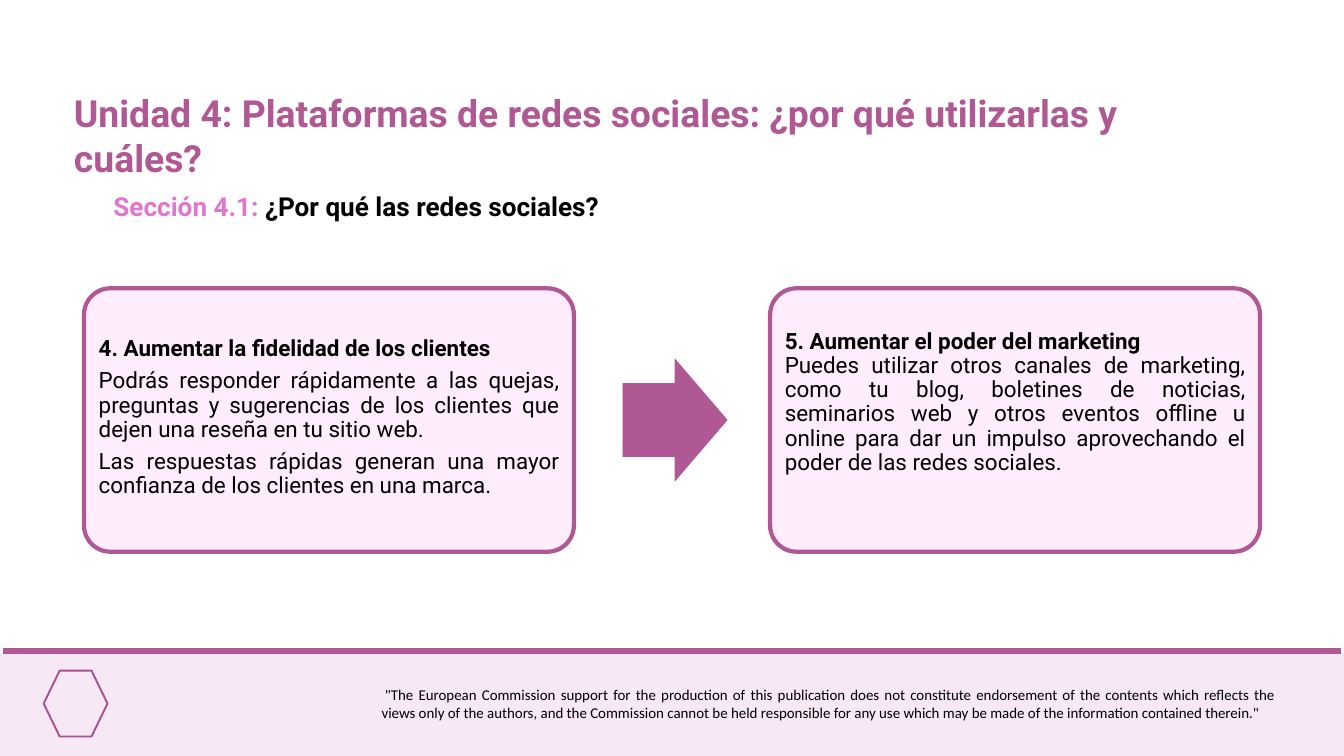
from lxml.etree import SubElement
from pptx import Presentation
from pptx.dml.color import RGBColor
from pptx.enum.shapes import MSO_CONNECTOR, MSO_SHAPE
from pptx.enum.text import MSO_ANCHOR, MSO_AUTO_SIZE, PP_ALIGN
from pptx.oxml.ns import qn
from pptx.util import Inches, Pt

PURPLE, PINK, BLACK = "B05894", "E076D1", "000000"
CARD_FILL, FOOTER_FILL, ICON_COLOUR = "FFECFC", "F6E9F5", "AB4E8E"

WIDTH, HEIGHT = 20, 11.25
MARGIN = WIDTH / 16
CARD_WIDTH, CARD_HEIGHT, CARD_TOP = 7.29, 3.92, 4.29
CARD_PADDING = 0.12
ARROW_WIDTH, ARROW_HEIGHT = 1.55, 1.81
FOOTER_TOP = 9.72

TITLE = "Unidad 4: Plataformas de redes sociales: ¿por qué utilizarlas y cuáles?"
SECTION = [("Sección 4.1: ", PINK), ("¿Por qué las redes sociales?", BLACK)]
DISCLAIMER = (
    '"The European Commission support for the production of this publication does not '
    "constitute endorsement of the contents which reflects the views only of the authors, "
    "and the Commission cannot be held responsible for any use which may be made of the "
    'information contained therein."'
)
CARDS = [
    {
        "heading": "4. Aumentar la fidelidad de los clientes",
        "body": [
            "Podrás responder rápidamente a las quejas, preguntas y sugerencias de los "
            "clientes que dejen una reseña en tu sitio web.",
            "Las respuestas rápidas generan una mayor confianza de los clientes en una marca.",
        ],
        "heading_gap": 8.4,
        "lift": 0.06,
    },
    {
        "heading": "5. Aumentar el poder del marketing",
        "body": [
            "Puedes utilizar otros canales de marketing, como tu blog, boletines de noticias, "
            "seminarios web y otros eventos offline u online para dar un impulso aprovechando "
            "el poder de las redes sociales.",
        ],
        "heading_gap": 0,
        "lift": 0.52,
    },
]


def colour(value):
    return RGBColor.from_string(value)


def apply(target, **values):
    for name, value in values.items():
        setattr(target, name, value)


def add_run(paragraph, text, size, text_colour=BLACK, bold=False, name="Roboto"):
    run = paragraph.add_run()
    run.text = text
    apply(run.font, size=Pt(size), bold=bold, name=name)
    run.font.color.rgb = colour(text_colour)


def add_shape(slide, kind, box, fill=None, line=None, weight=0):
    shape = slide.shapes.add_shape(kind, *map(Inches, box))
    shape.shadow.inherit = False
    for part, value in ((shape.fill, fill), (shape.line.fill, line)):
        if value:
            part.solid()
            part.fore_color.rgb = colour(value)
        else:
            part.background()
    if line:
        shape.line.width = Pt(weight)
    return shape


def add_text(slide, box):
    frame = slide.shapes.add_textbox(*map(Inches, box)).text_frame
    frame.word_wrap = True
    return frame


def add_footer(slide):
    add_shape(slide, MSO_SHAPE.RECTANGLE,
              (0, FOOTER_TOP, WIDTH, HEIGHT - FOOTER_TOP), FOOTER_FILL)
    rule = slide.shapes.add_connector(
        MSO_CONNECTOR.STRAIGHT, *map(Inches, (0.05, 9.69, WIDTH - 0.05, 9.69)))
    rule.line.color.rgb = colour(PURPLE)
    rule.line.width = Pt(6.75)
    SubElement(rule.element.spPr, qn("a:effectLst"))
    add_shape(slide, MSO_SHAPE.HEXAGON, (0.65, 9.98, 0.95, 0.98), line=ICON_COLOUR, weight=2)
    paragraph = add_text(slide, (5.58, 10.15, 13.5, 0.64)).paragraphs[0]
    paragraph.alignment = PP_ALIGN.JUSTIFY
    paragraph._p.get_or_add_pPr().set("indent", str(Inches(0.05)))
    add_run(paragraph, DISCLAIMER, 16, name="Calibri")


def add_headings(slide):
    title = slide.shapes.title
    apply(title, left=Inches(1), top=Inches(1.29), width=Inches(16.67), height=Inches(1.45))
    apply(title.text_frame, word_wrap=True, auto_size=MSO_AUTO_SIZE.NONE,
          vertical_anchor=MSO_ANCHOR.TOP)
    paragraph = title.text_frame.paragraphs[0]
    paragraph.alignment = PP_ALIGN.LEFT
    add_run(paragraph, TITLE, 40, PURPLE, True)
    section = add_text(slide, (1.59, 2.79, 16.41, 0.57)).paragraphs[0]
    for text, text_colour in SECTION:
        add_run(section, text, 28, text_colour, True)


def add_card(slide, left, card):
    panel = add_shape(slide, MSO_SHAPE.ROUNDED_RECTANGLE,
                      (left, CARD_TOP, CARD_WIDTH, CARD_HEIGHT), CARD_FILL, PURPLE, 4.5)
    panel.adjustments[0] = 0.1
    frame = add_text(slide, (left + CARD_PADDING, CARD_TOP + CARD_PADDING,
                             CARD_WIDTH - 2 * CARD_PADDING, CARD_HEIGHT - 2 * CARD_PADDING))
    inset = Inches(0.1)
    apply(frame, vertical_anchor=MSO_ANCHOR.MIDDLE, margin_left=inset, margin_right=inset,
          margin_top=inset, margin_bottom=inset + Inches(card["lift"]))
    texts = [card["heading"], *card["body"]]
    for index, text in enumerate(texts):
        paragraph = frame.add_paragraph() if index else frame.paragraphs[0]
        gap = 8.4 if index else card["heading_gap"]
        last = index == len(texts) - 1
        apply(paragraph, alignment=PP_ALIGN.JUSTIFY, line_spacing=0.9,
              space_after=Pt(0 if last else gap))
        add_run(paragraph, text, 24, bold=index == 0)


def add_arrow(slide):
    gap = WIDTH - 2 * (MARGIN + CARD_WIDTH)
    left = MARGIN + CARD_WIDTH + gap / 4
    top = CARD_TOP + (CARD_HEIGHT - ARROW_HEIGHT) / 2
    arrow = add_shape(slide, MSO_SHAPE.RIGHT_ARROW, (left, top, ARROW_WIDTH, ARROW_HEIGHT),
                      PURPLE, PURPLE, 0.75)
    arrow.adjustments[0] = 0.6
    arrow.adjustments[1] = 0.5


def main():
    presentation = Presentation()
    apply(presentation, slide_width=Inches(WIDTH), slide_height=Inches(HEIGHT))
    slide = presentation.slides.add_slide(presentation.slide_layouts[5])
    add_footer(slide)
    add_headings(slide)
    for left, card in zip((MARGIN, WIDTH - MARGIN - CARD_WIDTH), CARDS):
        add_card(slide, left, card)
    add_arrow(slide)
    presentation.save("out.pptx")


if __name__ == "__main__":
    main()
